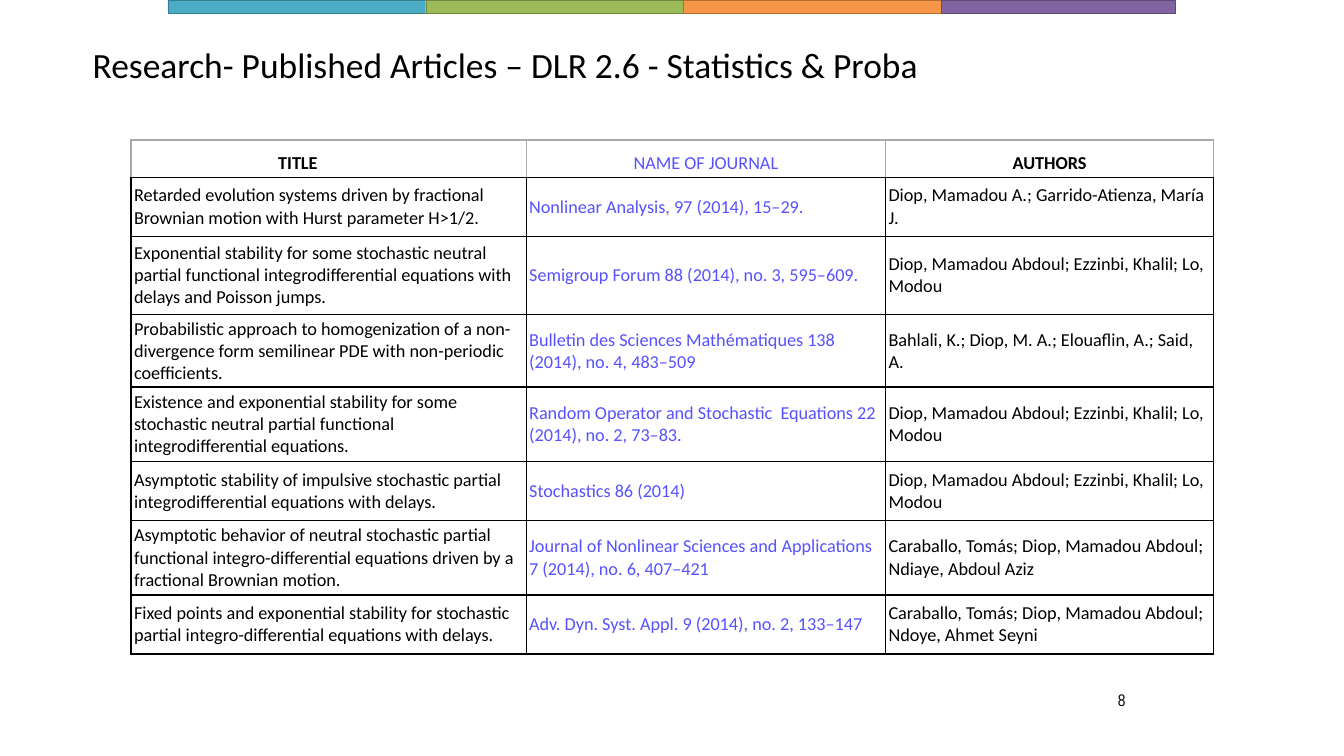
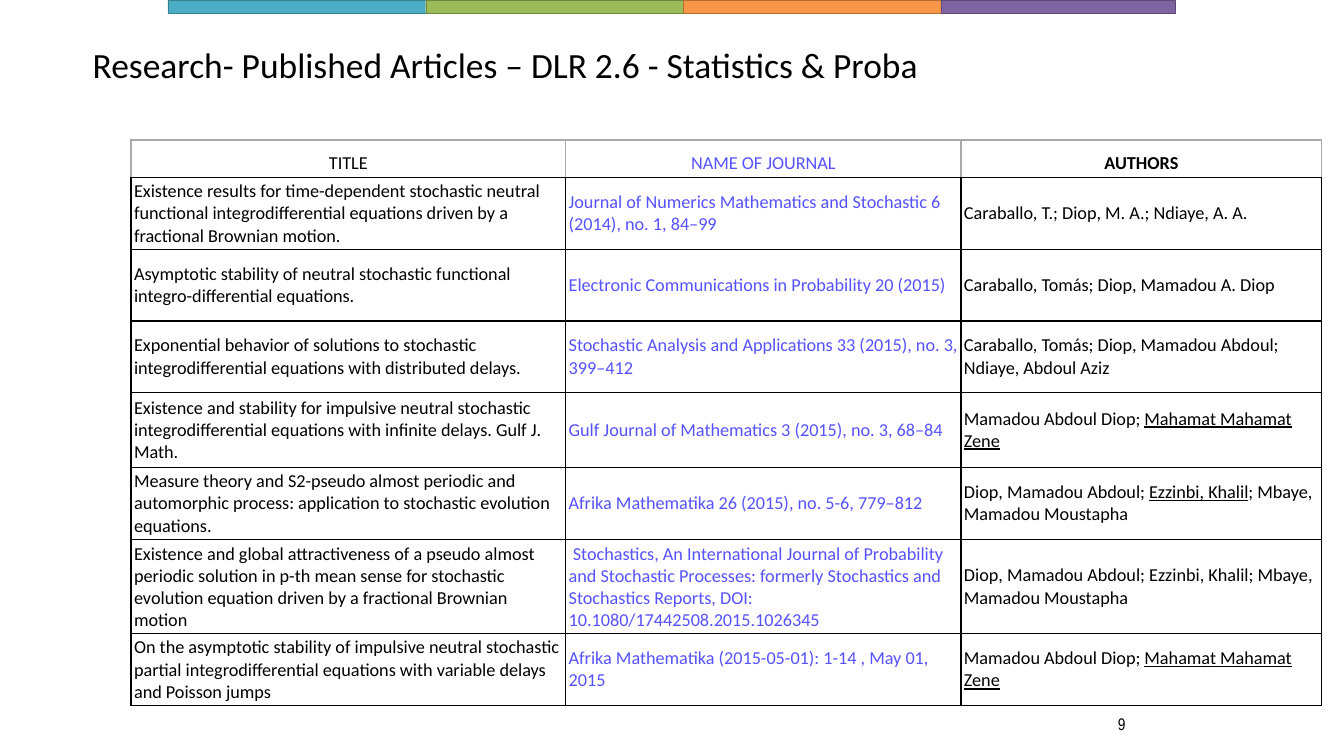
import pptx
import pptx.util
import pptx.dml.color
import pptx.enum.shapes
import pptx.enum.text
import pptx.oxml
import pptx.oxml.ns

Inches, Pt = pptx.util.Inches, pptx.util.Pt
RGBColor = pptx.dml.color.RGBColor
ALIGN, ANCHOR = pptx.enum.text.PP_ALIGN, pptx.enum.text.MSO_ANCHOR

SLIDE_W, SLIDE_H = Inches(13.33), Inches(7.5)

BLACK = RGBColor(0x00, 0x00, 0x00)
JOURNAL_BLUE = RGBColor(0x56, 0x52, 0xFF)
HEADER_GREY = RGBColor(0xAA, 0xAA, 0xAA)
BAND_PITCH = 19.18
BANDS = [  # fill, outline, width in % of the slide
    (RGBColor(0x4B, 0xAC, 0xC6), RGBColor(0x37, 0x7E, 0x90), BAND_PITCH),
    (RGBColor(0x9B, 0xBB, 0x59), RGBColor(0x71, 0x88, 0x41), BAND_PITCH),
    (RGBColor(0xF7, 0x96, 0x46), RGBColor(0xB4, 0x6D, 0x33), BAND_PITCH),
    (RGBColor(0x80, 0x64, 0xA2), RGBColor(0x5D, 0x49, 0x76), 17.4),
]

FONT, NUMBER_FONT = "Calibri", "Arial Narrow"
TITLE = "Research- Published Articles – DLR 2.6 - Statistics & Proba"
HEADERS = ("TITLE", "NAME OF JOURNAL", "AUTHORS")
COLUMN_SHARES = (0.365, 0.332, 0.303)
COLUMN_COLORS = (BLACK, JOURNAL_BLUE, BLACK)
TABLE_LEFT, TABLE_TOP, HEADER_HEIGHT = 9.75, 18.53, 4.93
NUMBER_TOP, NUMBER_GAP = 90.67, 0.5
CELL_MARGIN = Inches(0.03)

# Each article: row height in % of the slide, title, journal, authors.
# Words between underscores are underlined.
ARTICLES_2014 = [
    (7.8, "Retarded evolution systems driven by fractional Brownian motion with "
     "Hurst parameter H>1/2.",
     "Nonlinear Analysis, 97 (2014), 15–29.",
     "Diop, Mamadou A.; Garrido-Atienza, María J."),
    (10.4, "Exponential stability for some stochastic neutral partial functional "
     "integrodifferential equations with delays and Poisson jumps.",
     "Semigroup Forum 88 (2014), no. 3, 595–609.",
     "Diop, Mamadou Abdoul; Ezzinbi, Khalil; Lo, Modou"),
    (9.53, "Probabilistic approach to homogenization of a non-divergence form "
     "semilinear PDE with non-periodic coefficients.",
     "Bulletin des Sciences Mathématiques 138 (2014), no. 4, 483–509",
     "Bahlali, K.; Diop, M. A.; Elouaflin, A.; Said, A."),
    (9.87, "Existence and exponential stability for some stochastic neutral partial "
     "functional integrodifferential equations.",
     "Random Operator and Stochastic  Equations 22 (2014), no. 2, 73–83.",
     "Diop, Mamadou Abdoul; Ezzinbi, Khalil; Lo, Modou"),
    (7.8, "Asymptotic stability of impulsive stochastic partial integrodifferential "
     "equations with delays.",
     "Stochastics 86 (2014)",
     "Diop, Mamadou Abdoul; Ezzinbi, Khalil; Lo, Modou"),
    (9.87, "Asymptotic behavior of neutral stochastic partial functional "
     "integro-differential equations driven by a fractional Brownian motion.",
     "Journal of Nonlinear Sciences and Applications 7 (2014), no. 6, 407–421",
     "Caraballo, Tomás; Diop, Mamadou Abdoul; Ndiaye, Abdoul Aziz"),
    (7.8, "Fixed points and exponential stability for stochastic partial "
     "integro-differential equations with delays.",
     "Adv. Dyn. Syst. Appl. 9 (2014), no. 2, 133–147",
     "Caraballo, Tomás; Diop, Mamadou Abdoul; Ndoye, Ahmet Seyni"),
]
ARTICLES_2015 = [
    (9.5, "Existence results for time-dependent stochastic neutral functional "
     "integrodifferential equations driven by a fractional Brownian motion.",
     "Journal of Numerics Mathematics and Stochastic 6 (2014), no. 1, 84–99",
     "Caraballo, T.; Diop, M. A.; Ndiaye, A. A."),
    (9.5, "Asymptotic stability of neutral stochastic functional "
     "integro-differential equations.",
     "Electronic Communications in Probability 20 (2015)",
     "Caraballo, Tomás; Diop, Mamadou A. Diop"),
    (9.5, "Exponential behavior of solutions to stochastic integrodifferential "
     "equations with distributed delays.",
     "Stochastic Analysis and Applications 33 (2015), no. 3, 399–412",
     "Caraballo, Tomás; Diop, Mamadou Abdoul; Ndiaye, Abdoul Aziz"),
    (9.87, "Existence and stability for impulsive neutral stochastic "
     "integrodifferential equations with infinite delays. Gulf J. Math.",
     "Gulf Journal of Mathematics 3 (2015), no. 3, 68–84",
     "Mamadou Abdoul Diop; _Mahamat Mahamat Zene_"),
    (9.6, "Measure theory and S2-pseudo almost periodic and automorphic process: "
     "application to stochastic evolution equations.",
     "Afrika Mathematika 26 (2015), no. 5-6, 779–812",
     "Diop, Mamadou Abdoul; _Ezzinbi, Khalil_; Mbaye, Mamadou Moustapha"),
    (12.4, "Existence and global attractiveness of a pseudo almost periodic solution "
     "in p-th mean sense for stochastic evolution equation driven by a fractional "
     "Brownian motion",
     " Stochastics, An International Journal of Probability and Stochastic "
     "Processes: formerly Stochastics and Stochastics Reports, "
     "DOI: 10.1080/17442508.2015.1026345",
     "Diop, Mamadou Abdoul; Ezzinbi, Khalil; Mbaye, Mamadou Moustapha"),
    (9.5, "On the asymptotic stability of impulsive neutral stochastic partial "
     "integrodifferential equations with variable delays and Poisson jumps",
     "Afrika Mathematika (2015-05-01): 1-14 , May 01, 2015",
     "Mamadou Abdoul Diop; _Mahamat Mahamat Zene_"),
]


def across(percent):
    return round(SLIDE_W * percent / 100)


def down(percent):
    return round(SLIDE_H * percent / 100)


def box(left, top, width, height):
    return across(left), down(top), across(width), down(height)


def add_run(p, text, size, color=BLACK, font=FONT, bold=False, underline=False):
    r = p.add_run()
    r.text = text
    r.font.name, r.font.size = font, Pt(size)
    r.font.bold, r.font.underline = bold, underline
    r.font.color.rgb = color


def add_text(s, place, text, size, font=FONT, align=ALIGN.LEFT, spacing=1.0):
    tf = s.shapes.add_textbox(*box(*place)).text_frame
    tf.word_wrap = True
    tf.vertical_anchor = ANCHOR.MIDDLE
    tf.margin_left = tf.margin_right = tf.margin_top = tf.margin_bottom = 0
    p = tf.paragraphs[0]
    p.alignment, p.line_spacing = align, spacing
    add_run(p, text, size, font=font)


def add_bands(s):
    for i, (fill, outline, width) in enumerate(BANDS):
        band = s.shapes.add_shape(pptx.enum.shapes.MSO_SHAPE.RECTANGLE,
                                  *box(12.5 + i * BAND_PITCH, 0, width, 1.75))
        band.shadow.inherit = False
        band.fill.solid()
        band.fill.fore_color.rgb = fill
        band.line.color.rgb = outline
        band.line.width = Pt(0.25)


def set_borders(cell, color):
    """Draw all four sides in one colour, but the bottom always in black."""
    tcPr = cell._tc.get_or_add_tcPr()
    for side in "LRTB":
        side_color = BLACK if side == "B" else color
        tcPr.append(pptx.oxml.parse_xml(
            f'<a:ln{side} {pptx.oxml.ns.nsdecls("a")} w="{Pt(1)}"><a:solidFill>'
            f'<a:srgbClr val="{side_color}"/></a:solidFill></a:ln{side}>'))


def fill_cell(cell, text, color, header=False, bold=False):
    cell.margin_left = cell.margin_right = CELL_MARGIN
    cell.margin_top = cell.margin_bottom = CELL_MARGIN
    cell.vertical_anchor = ANCHOR.BOTTOM if header else ANCHOR.MIDDLE
    set_borders(cell, HEADER_GREY if header else BLACK)
    cell.fill.background()
    p = cell.text_frame.paragraphs[0]
    p.alignment = ALIGN.CENTER if header else ALIGN.LEFT
    for i, part in enumerate(text.split("_")):
        if part:
            add_run(p, part, 13, color, bold=bold, underline=i % 2 == 1)


def add_article_table(s, width, heights, articles, bold_headers):
    table = s.shapes.add_table(len(heights), len(HEADERS),
                               *box(TABLE_LEFT, TABLE_TOP, width, sum(heights))).table
    table.first_row = table.horz_banding = False
    for column, share in zip(table.columns, COLUMN_SHARES):
        column.width = across(width * share)
    for row, height in zip(table.rows, heights):
        row.height = down(height)
    for c, (header, color) in enumerate(zip(HEADERS, COLUMN_COLORS)):
        fill_cell(table.cell(0, c), header, color, True, header in bold_headers)
        for r, article in enumerate(articles, 1):
            fill_cell(table.cell(r, c), article[c + 1], color)
    return table


def add_article_slide(prs, number, width, articles, bold_headers):
    """Add title, table and a page number that stays clear of the table."""
    s = prs.slides.add_slide(prs.slide_layouts[6])
    add_bands(s)
    add_text(s, (6.9, 5.33, 72.5, 7.07), TITLE, 25.3, spacing=0.9)
    heights = [HEADER_HEIGHT] + [article[0] for article in articles]
    table = add_article_table(s, width, heights, articles, bold_headers)
    number_top = max(NUMBER_TOP, TABLE_TOP + sum(heights) + NUMBER_GAP)
    add_text(s, (66.24, number_top, 17.5, 3.87), str(number), 12, NUMBER_FONT,
             ALIGN.RIGHT)
    return table


def main():
    prs = pptx.Presentation()
    prs.slide_width, prs.slide_height = SLIDE_W, SLIDE_H
    table = add_article_slide(prs, 8, 80.55, ARTICLES_2014, ("TITLE", "AUTHORS"))
    table.cell(0, 0).margin_right = Inches(0.64)  # heading sits left of centre
    add_article_slide(prs, 9, 88.6, ARTICLES_2015, ("AUTHORS",))
    prs.save("out.pptx")


if __name__ == "__main__":
    main()
